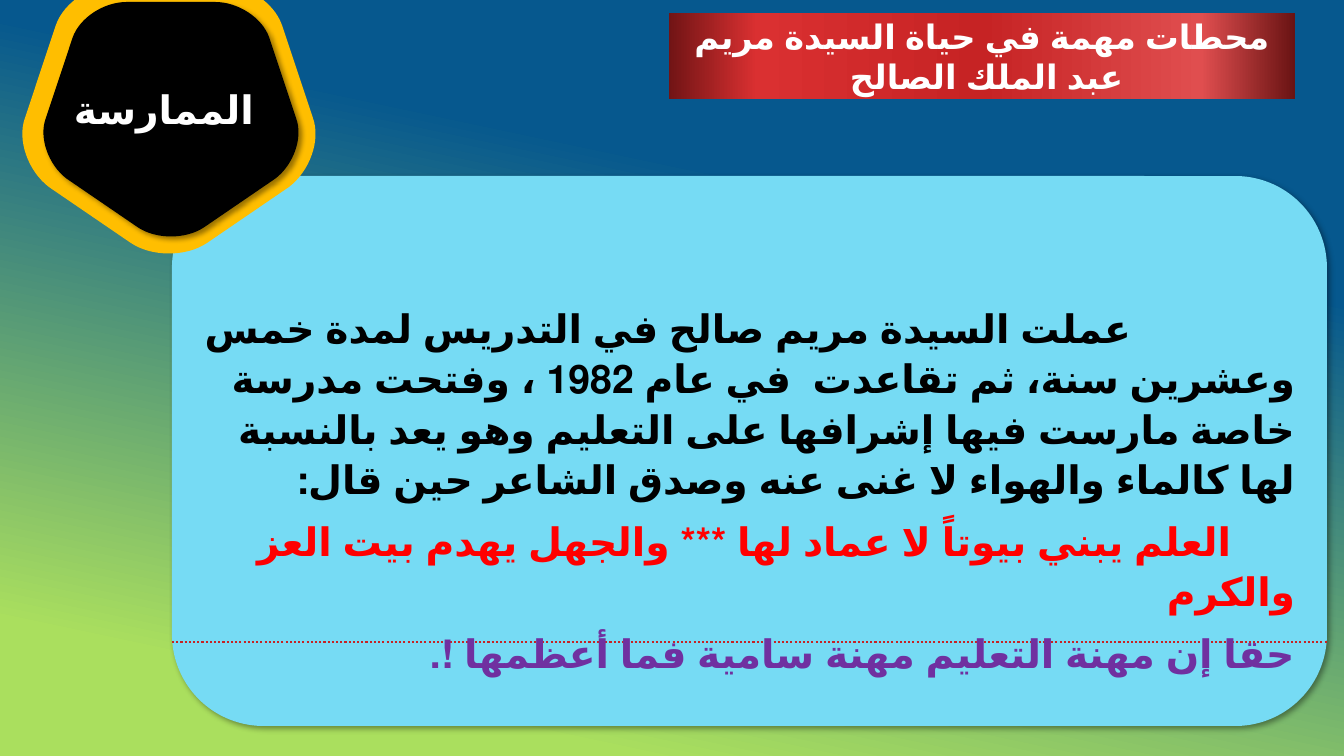
from copy import deepcopy

from lxml import etree
from pptx import Presentation
from pptx import util as u
from pptx.dml.color import RGBColor
from pptx.enum import dml, lang, shapes, text
from pptx.oxml.ns import qn

PX = 914400 / 100.8

BLUE = RGBColor(0x06, 0x58, 0x8E)
GREEN = RGBColor(0xAA, 0xDF, 0x5E)
SKY = RGBColor(0x76, 0xDB, 0xF4)
CRIMSON = RGBColor(0xC6, 0x23, 0x24)
AMBER = RGBColor(0xFF, 0xBE, 0x00)
BLACK = RGBColor(0x00, 0x00, 0x00)
WHITE = RGBColor(0xFF, 0xFF, 0xFF)
RED = RGBColor(0xFF, 0x00, 0x00)
PURPLE = RGBColor(0x70, 0x30, 0xA0)

SKY_STOPS = [(0.29, BLUE), (0.87, GREEN)]
RIBBON_STOPS = [
    (0, RGBColor(0x71, 0x14, 0x15)),
    (0.14, RGBColor(0xDA, 0x30, 0x31)),
    (0.5, CRIMSON),
    (0.85, RGBColor(0xE0, 0x4E, 0x4F)),
    (1, RGBColor(0x69, 0x13, 0x13)),
]

RIGHT_CORNERS = [
    [(51, 0), (77, 0), (105, 18), (113, 41)],
    [(144, 134), (152, 156), (141, 187), (120, 203)],
]
BOTTOM_CORNER = [(38, 259), (17, 273), (-17, 273), (-38, 259)]


def px(length):
    return u.Emu(round(length * PX))


def box(left, top, width, height):
    return px(left), px(top), px(width), px(height)


def paint_gradient(fill, owner, stops, angle):
    fill.gradient()
    fill.gradient_angle = angle
    stop_list = next(owner.iter(qn("a:gsLst")))
    while len(stop_list) < len(stops):
        stop_list.append(deepcopy(stop_list[0]))
    for stop, (position, color) in zip(fill.gradient_stops, stops):
        stop.position = position
        stop.color.rgb = color


def paint_solid(shape, color):
    shape.shadow.inherit = False
    shape.fill.solid()
    shape.fill.fore_color.rgb = color
    shape.line.fill.background()


def cast_shadow(shape):
    effects = shape._element.spPr.find(qn("a:effectLst"))
    shadow = etree.SubElement(effects, qn("a:outerShdw"), blurRad=str(u.Pt(4)),
                              dist=str(u.Pt(3)), dir="2700000", algn="tl", rotWithShape="0")
    color = etree.SubElement(shadow, qn("a:srgbClr"), val=str(BLACK))
    etree.SubElement(color, qn("a:alpha"), val="40000")


def add_run(paragraph, words, size, font, color):
    run = paragraph.add_run()
    run.text = words
    run.font.size = u.Pt(size)
    run.font.bold = True
    run.font.name = font
    run.font.language_id = lang.MSO_LANGUAGE_ID.ARABIC
    run.font.color.rgb = color


def set_rtl(paragraph, indent=0):
    properties = paragraph._p.get_or_add_pPr()
    properties.set("rtl", "1")
    properties.set("marL", "0")
    properties.set("indent", str(px(indent)))


def add_text_box(slide, *place):
    frame = slide.shapes.add_textbox(*box(*place)).text_frame
    frame.word_wrap = True
    return frame


def round_corners(pentagon):
    segments = list(pentagon._element.iter(qn("a:lnTo")))
    for first in range(0, len(segments), 4):
        corner = segments[first:first + 3]
        curve = etree.Element(qn("a:cubicBezTo"))
        corner[0].addprevious(curve)
        for segment in corner:
            curve.append(segment[0])
            segment.getparent().remove(segment)


def add_pentagon(slide, center, top, scale, color):
    left_corners = [[(-x, y) for x, y in reversed(corner)] for corner in reversed(RIGHT_CORNERS)]
    corners = RIGHT_CORNERS + [BOTTOM_CORNER] + left_corners
    outline = [(px(center + scale * x), px(top + scale * y)) for corner in corners for x, y in corner]
    builder = slide.shapes.build_freeform(*outline[0])
    builder.add_line_segments(outline[1:], close=True)
    pentagon = builder.convert_to_shape()
    round_corners(pentagon)
    paint_solid(pentagon, color)
    return pentagon


def add_panel(slide):
    panel = slide.shapes.add_shape(shapes.MSO_SHAPE.ROUNDED_RECTANGLE, *box(172, 176, 1155, 550))
    paint_solid(panel, SKY)
    cast_shadow(panel)
    rule = slide.shapes.add_connector(shapes.MSO_CONNECTOR.STRAIGHT,
                                      px(172), px(642), px(1327), px(642))
    rule.line.color.rgb = CRIMSON
    rule.line.width = u.Pt(1.5)
    rule.line.dash_style = dml.MSO_LINE.ROUND_DOT
    etree.SubElement(rule._element.spPr, qn("a:effectLst"))


def add_title(slide, words):
    ribbon = slide.shapes.add_shape(shapes.MSO_SHAPE.RECTANGLE, *box(669, 13, 626, 86))
    ribbon.shadow.inherit = False
    ribbon.line.fill.background()
    paint_gradient(ribbon.fill, ribbon._element, RIBBON_STOPS, 0)
    frame = ribbon.text_frame
    frame.word_wrap = True
    frame.vertical_anchor = text.MSO_ANCHOR.MIDDLE
    frame.margin_left = frame.margin_right = px(9)
    frame.margin_top = frame.margin_bottom = px(4)
    title = frame.paragraphs[0]
    title.alignment = text.PP_ALIGN.CENTER
    set_rtl(title)
    add_run(title, words, 24, "Arial", WHITE)


def add_badge(slide, words):
    add_pentagon(slide, 169, -16, 1, AMBER)
    cast_shadow(add_pentagon(slide, 171, 2, 0.87, BLACK))
    label = add_text_box(slide, 49, 80, 230, 113).paragraphs[0]
    label.alignment = text.PP_ALIGN.CENTER
    add_run(label, words, 28, "Quicksand", WHITE)


def add_story(slide, passages):
    frame = add_text_box(slide, 194, 296, 1111, 333)
    for number, (words, color, indent) in enumerate(passages):
        passage = frame.add_paragraph() if number else frame.paragraphs[0]
        passage.alignment = text.PP_ALIGN.RIGHT
        passage.line_spacing = 1.07
        passage.space_after = u.Pt(8)
        set_rtl(passage, indent)
        add_run(passage, words, 28, "Arial", color)


def main():
    deck = Presentation()
    deck.slide_width, deck.slide_height = px(1344), px(756)
    slide = deck.slides.add_slide(deck.slide_layouts[6])
    paint_gradient(slide.background.fill, slide._element, SKY_STOPS, 258)
    add_panel(slide)
    add_title(slide, "محطات مهمة في حياة السيدة مريم عبد الملك الصالح ")
    add_badge(slide, "الممارسة")
    add_story(slide, [
        ("عملت السيدة مريم صالح في التدريس لمدة خمس وعشرين سنة، ثم تقاعدت  في عام 1982 ، "
         "وفتحت مدرسة خاصة مارست فيها إشرافها على التعليم وهو يعد بالنسبة لها كالماء والهواء "
         "لا غنى عنه وصدق الشاعر حين قال:", BLACK, 164),
        ("العلم يبني بيوتاً لا عماد لها *** والجهل يهدم بيت العز والكرم", RED, 64),
        ("حقا إن مهنة التعليم مهنة سامية فما أعظمها !.", PURPLE, 0),
    ])
    deck.save("out.pptx")


if __name__ == "__main__":
    main()
